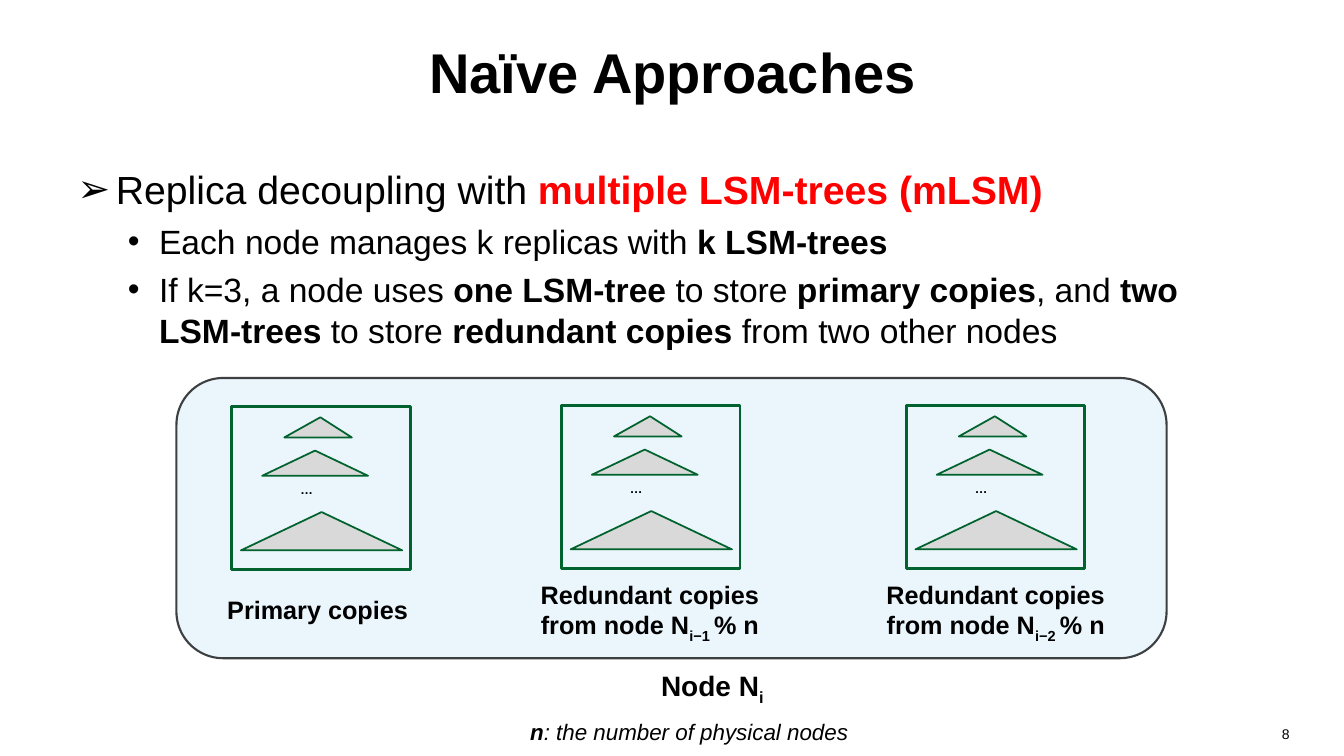
"""Build the slide on naïve approaches with multiple LSM-trees."""
from lxml import etree
from pptx import Presentation
from pptx.dml.color import RGBColor
from pptx.enum.shapes import MSO_SHAPE
from pptx.enum.text import MSO_ANCHOR, PP_ALIGN
from pptx.oxml.ns import qn
from pptx.util import Inches, Pt

LEFT, MID, RIGHT = PP_ALIGN.LEFT, PP_ALIGN.CENTER, PP_ALIGN.RIGHT
TOP, CENTER = MSO_ANCHOR.TOP, MSO_ANCHOR.MIDDLE
RECT, ROUND = MSO_SHAPE.RECTANGLE, MSO_SHAPE.ROUNDED_RECTANGLE
TRI = MSO_SHAPE.ISOSCELES_TRIANGLE
BLACK = RGBColor(0x00, 0x00, 0x00)
RED = RGBColor(0xFF, 0x00, 0x00)
PALE = RGBColor(0xEA, 0xF5, 0xFC)
SLATE = RGBColor(0x3D, 0x3F, 0x41)
GRAY = RGBColor(0xD9, 0xD9, 0xD9)
GREEN = RGBColor(0x00, 0x62, 0x2C)

B = {"bold": True}
SUB = {"bold": True, "sub": True}
POINTS = [
    ("➢", 28, 0.38, 0.38, 2, [
        ("Replica decoupling with ", {}),
        ("multiple LSM-trees (mLSM)", {"bold": True, "color": RED})]),
    ("•", 24, 0.81, 0.31, 4.8, [
        ("Each node manages k replicas with ", {}), ("k LSM-trees", B)]),
    ("•", 24, 0.81, 0.31, 4.8, [
        ("If k=3, a node uses ", {}), ("one LSM-tree ", B),
        ("to store ", {}), ("primary copies", B), (", and ", {}),
        ("two LSM-trees ", B), ("to store ", {}),
        ("redundant copies ", B), ("from two other nodes", {})]),
]


def source(index):
    return [[("Redundant copies ", B)],
            [("from node N", B), (index, SUB), ("% n ", B)]]


TREES = [
    (2.3, 4.03, (1.31, 5.85, 3.68, 0.4), [[("Primary copies", B)]]),
    (5.57, 4.02, (4.64, 5.7, 3.68, 0.71), source("i−1 ")),
    (8.99, 4.02, (8.07, 5.7, 3.68, 0.71), source("i−2 ")),
]
LEVELS = [
    (0.52, 0.11, 0.67, 0.2, 0.534),
    (0.3, 0.44, 1.05, 0.25, 0.5),
    (0.09, 1.05, 1.6, 0.38, 0.5),
]
DOTS = [[("…", B), (" ", {"size": 14, "font": "Calibri"})]]
LABELS = [
    ((0.67, 0.08, 12, 1.25), 40, MID, CENTER, True,
     [[("Naïve Approaches", B)]]),
    ((6.37, 6.58, 1.39, 0.44), 20, MID, TOP, False,
     [[("Node N", B), ("i", SUB)]]),
    ((5.16, 7.08, 3.38, 0.37), 16, LEFT, TOP, False,
     [[("n", {"bold": True, "italic": True}),
       (": the number of physical nodes", {"italic": True})]]),
    ((9.78, 7.15, 3.11, 0.35), 10, RIGHT, TOP, True, [[("8", {})]]),
]


def add_run(para, text, size, bold=False, italic=False, color=BLACK,
            font="Arial", sub=False):
    run = para.add_run()
    run.text = text
    face = run.font
    face.name, face.size = font, Pt(size)
    face.bold, face.italic = bold, italic
    face.color.rgb = color
    if sub:
        run._r.get_or_add_rPr().set("baseline", "-25000")


def add_text(slide, box, size, align, anchor, wrap, lines):
    frame = slide.shapes.add_textbox(*map(Inches, box)).text_frame
    frame.word_wrap = wrap
    frame.vertical_anchor = anchor
    for i, runs in enumerate(lines):
        para = frame.add_paragraph() if i else frame.paragraphs[0]
        para.alignment = align
        for text, style in runs:
            add_run(para, text, **{"size": size, **style})
    return frame


def add_points(slide):
    lines = [point[-1] for point in POINTS]
    frame = add_text(slide, (0.67, 1.58, 11.83, 5.12), 24, LEFT, TOP, True,
                     lines)
    for para, point in zip(frame.paragraphs, POINTS):
        mark, size, indent, hang, gap, _ = point
        para.space_before = Pt(gap)
        para.line_spacing = 1.03
        for run in para.runs:
            run.font.size = Pt(size)
        props = para._p.get_or_add_pPr()
        props.set("marL", str(Inches(indent)))
        props.set("indent", str(-Inches(hang)))
        face = etree.SubElement(props, qn("a:buFont"))
        face.set("typeface", "Arial")
        etree.SubElement(props, qn("a:buChar")).set("char", mark)


def add_form(slide, kind, box, fill, line, width):
    form = slide.shapes.add_shape(kind, *map(Inches, box))
    form.shadow.inherit = False
    if fill is None:
        form.fill.background()
    else:
        form.fill.solid()
        form.fill.fore_color.rgb = fill
    form.line.color.rgb = line
    form.line.width = Pt(width)
    return form


def add_tree(slide, left, top, box, caption):
    add_form(slide, RECT, (left, top, 1.77, 1.62), None, GREEN, 2)
    for dx, dy, wide, high, peak in LEVELS:
        level = add_form(slide, TRI, (left + dx, top + dy, wide, high),
                         GRAY, GREEN, 1.25)
        level.adjustments[0] = peak
    add_text(slide, (left + 0.58, top + 0.63, 0.34, 0.34), 9, LEFT, TOP,
             True, DOTS)
    add_text(slide, box, 18, MID, TOP, True, caption)


def main():
    deck = Presentation()
    deck.slide_width, deck.slide_height = Inches(13.33), Inches(7.5)
    slide = deck.slides.add_slide(deck.slide_layouts[6])
    add_points(slide)
    add_form(slide, ROUND, (1.75, 3.75, 9.82, 2.78), PALE, SLATE, 1.5)
    for tree in TREES:
        add_tree(slide, *tree)
    for label in LABELS:
        add_text(slide, *label)
    deck.save("out.pptx")


if __name__ == "__main__":
    main()
